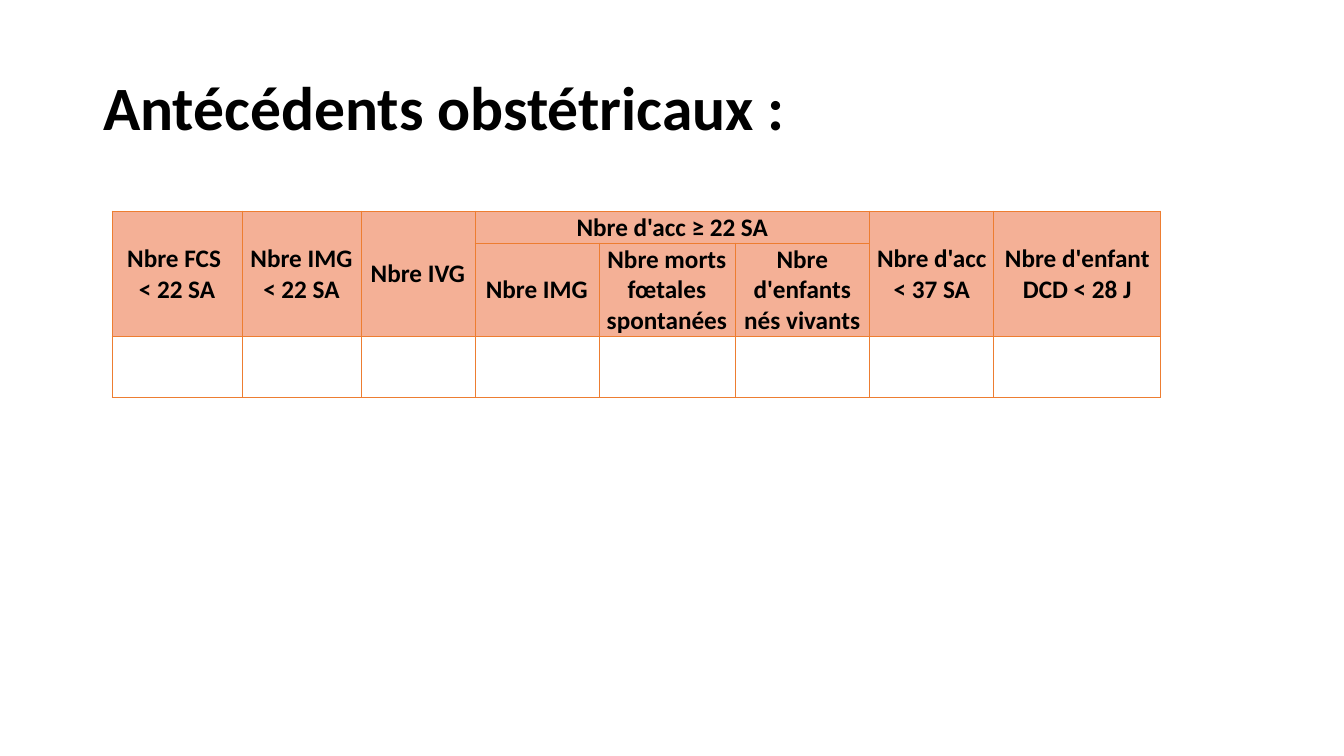
from lxml import etree
from pptx import Presentation
from pptx.dml.color import RGBColor
from pptx.enum.text import MSO_ANCHOR, PP_ALIGN
from pptx.oxml.ns import qn
from pptx.util import Emu, Pt

MIDDLE = MSO_ANCHOR.MIDDLE
LEFT, CENTER = PP_ALIGN.LEFT, PP_ALIGN.CENTER
TITLE_ONLY = 5
EMU_PER_INCH = 914400
PX_PER_INCH = 100.8

# Table geometry in px
COLUMN_WIDTHS = [130, 119, 114, 124, 136, 135, 124, 167]
ROW_HEIGHTS = [32, 93, 61]

# (row, column, row span, column span, paragraphs)
HEADERS = [
    (0, 0, 2, 1, ["Nbre FCS ", "< 22 SA"]),
    (0, 1, 2, 1, ["Nbre IMG < 22 SA"]),
    (0, 2, 2, 1, ["Nbre IVG"]),
    (0, 3, 1, 3, ["Nbre d'acc ≥ 22 SA"]),
    (0, 6, 2, 1, ["Nbre d'acc < 37 SA"]),
    (0, 7, 2, 1, ["Nbre d'enfant DCD < 28 J"]),
    (1, 3, 1, 1, ["Nbre IMG"]),
    (1, 4, 1, 1, ["Nbre morts fœtales spontanées"]),
    (1, 5, 1, 1, ["Nbre d'enfants nés vivants"]),
]


def px(length):
    return Emu(round(length * EMU_PER_INCH / PX_PER_INCH))


def color(value):
    return RGBColor.from_string(value)


class SlideBuilder:
    text_color = "000000"
    header_fill = "F4B096"
    body_fill = "FFFFFF"
    border_color = "ED7D31"
    border_width = Pt(0.5)
    title_font = {"name": "Calibri", "size": Pt(44), "bold": True}
    header_font = {"name": "Calibri", "size": Pt(18), "bold": True}

    def __init__(self, deck):
        self.slide = deck.slides.add_slide(deck.slide_layouts[TITLE_ONLY])

    def add_text(self, frame, paragraphs, font, align, spacing=1.0):
        for index, text in enumerate(paragraphs):
            para = frame.add_paragraph() if index else frame.paragraphs[0]
            para.alignment = align
            para.line_spacing = spacing
            span = para.add_run()
            span.text = text
            for name, value in font.items():
                setattr(span.font, name, value)
            span.font.color.rgb = color(self.text_color)

    def title(self, text, left, top, width, height):
        box = self.slide.shapes.title
        box.left, box.top = px(left), px(top)
        box.width, box.height = px(width), px(height)
        box.text_frame.word_wrap = True
        box.text_frame.vertical_anchor = MIDDLE
        self.add_text(box.text_frame, [text], self.title_font, LEFT, 0.9)

    def style_cell(self, cell, fill):
        # Borders come before the fill in the cell properties
        properties = cell._tc.get_or_add_tcPr()
        for side in ("a:lnL", "a:lnR", "a:lnT", "a:lnB"):
            line = etree.SubElement(properties, qn(side), w=str(self.border_width))
            solid = etree.SubElement(line, qn("a:solidFill"))
            etree.SubElement(solid, qn("a:srgbClr"), val=self.border_color)
        cell.fill.solid()
        cell.fill.fore_color.rgb = color(fill)

    def table(self, left, top, widths, heights, headers):
        frame = self.slide.shapes.add_table(
            len(heights), len(widths), px(left), px(top),
            px(sum(widths)), px(sum(heights)))
        grid = frame.table
        grid.first_row = grid.horz_banding = False
        for column, width in zip(grid.columns, widths):
            column.width = px(width)
        for row, height in zip(grid.rows, heights):
            row.height = px(height)

        # Fill and borders: two header rows, one empty entry row
        for index, row in enumerate(grid.rows):
            fill = self.header_fill if index < 2 else self.body_fill
            for cell in row.cells:
                self.style_cell(cell, fill)

        # Header labels
        margins = {"margin_left": px(1), "margin_right": px(1),
                   "margin_top": px(1), "margin_bottom": 0}
        for row, column, row_span, column_span, paragraphs in headers:
            cell = grid.cell(row, column)
            if row_span * column_span > 1:
                cell.merge(grid.cell(row + row_span - 1, column + column_span - 1))
            for name, value in margins.items():
                setattr(cell, name, value)
            cell.vertical_anchor = MIDDLE
            self.add_text(cell.text_frame, paragraphs, self.header_font, CENTER)


def main():
    deck = Presentation()
    deck.slide_width, deck.slide_height = px(1344), px(756)
    page = SlideBuilder(deck)
    page.title("Antécédents obstétricaux :", 93, 38, 1159, 146)
    page.table(112, 211, COLUMN_WIDTHS, ROW_HEIGHTS, HEADERS)
    deck.save("out.pptx")


if __name__ == "__main__":
    main()
